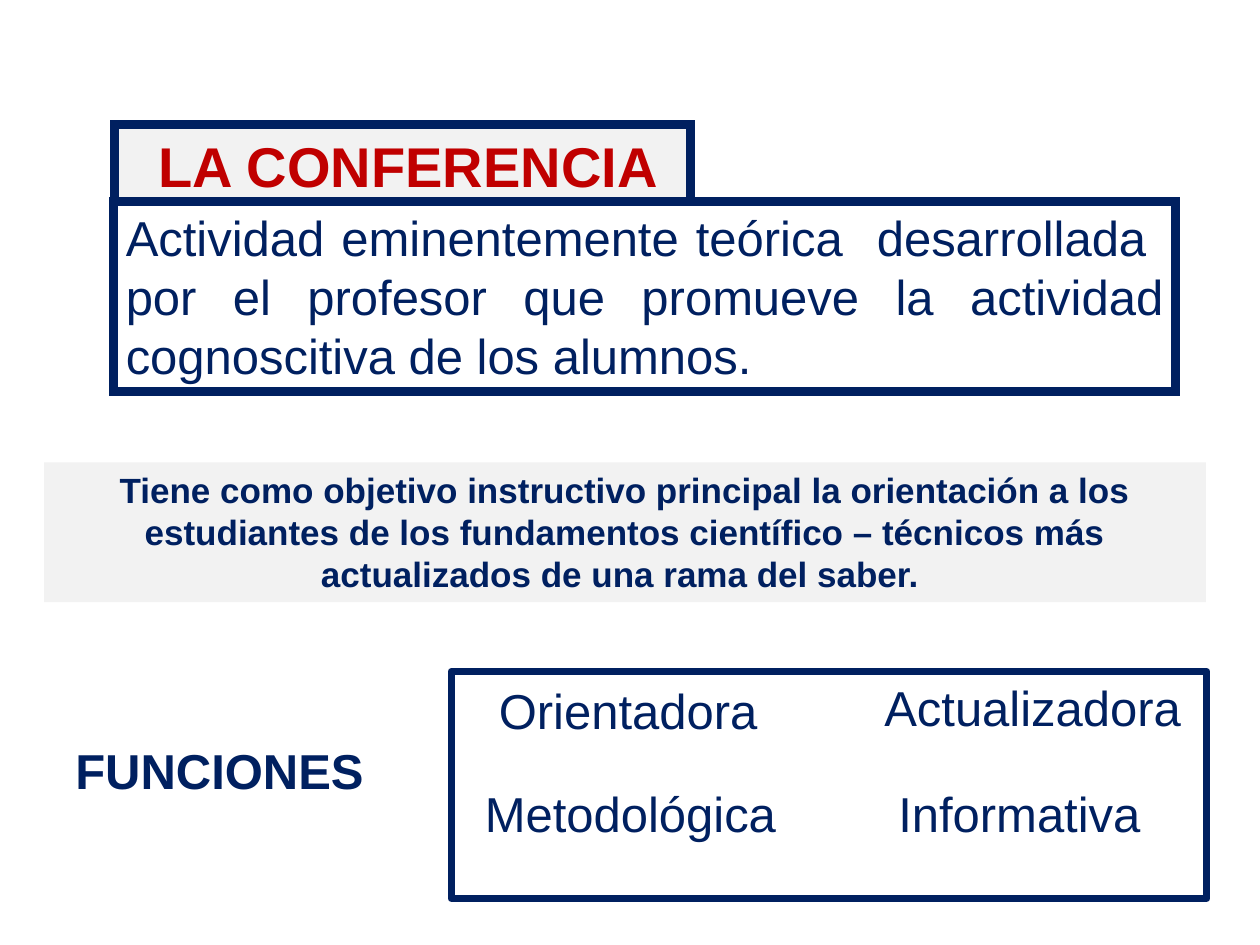
"""Build the slide that defines the lecture and lists its functions."""
import dataclasses

import lxml.etree
import pptx
import pptx.dml.color
import pptx.enum.shapes
import pptx.enum.text
import pptx.oxml
import pptx.oxml.ns
import pptx.util

ALIGN = pptx.enum.text.PP_ALIGN


@dataclasses.dataclass(frozen=True)
class Theme:
    font: str = "Arial"
    navy: str = "002060"
    red: str = "C00000"
    grey: str = "F2F2F2"
    white: str = "FFFFFF"
    title: int = 32
    body: int = 28
    note: int = 20
    border: int = 5
    frame: int = 4


class Deck:
    COLS, ROWS = 100, 75

    def __init__(self, theme):
        self.theme = theme
        self.prs = pptx.Presentation()
        self.prs.slide_width = pptx.util.Inches(10)
        self.prs.slide_height = pptx.util.Inches(7.5)
        self.s = self.prs.slides.add_slide(self.prs.slide_layouts[5])

    def place(self, col, row, cols, rows):
        x = self.prs.slide_width / self.COLS
        y = self.prs.slide_height / self.ROWS
        return [round(v) for v in (col * x, row * y, cols * x, rows * y)]

    def color(self, value):
        return pptx.dml.color.RGBColor.from_string(value)

    def paint(self, sp, fill=None, line=0, join="miter"):
        if fill:
            sp.fill.solid()
            sp.fill.fore_color.rgb = self.color(fill)
        else:
            sp.fill.background()
        if line:
            sp.line.color.rgb = self.color(self.theme.navy)
            sp.line.width = pptx.util.Pt(line)
            ln = sp.line._get_or_add_ln()
            lxml.etree.SubElement(ln, pptx.oxml.ns.qn("a:" + join))
        else:
            sp.line.fill.background()

    def add_text(self, sp, text, size, color=None, bold=False, align=ALIGN.LEFT, indent=0):
        tf = sp.text_frame
        tf.word_wrap = True
        tf.vertical_anchor = pptx.enum.text.MSO_ANCHOR.TOP
        tf.margin_left = pptx.util.Inches(0.1 + indent)
        tf.margin_right = pptx.util.Inches(0.1)
        p = tf.paragraphs[0]
        p.alignment = align
        r = p.add_run()
        r.text = text
        r.font.name = self.theme.font
        r.font.size = pptx.util.Pt(size)
        r.font.bold = bold
        r.font.color.rgb = self.color(color or self.theme.navy)
        return r

    def title(self, at, text):
        sp = self.s.shapes.title
        sp.left, sp.top, sp.width, sp.height = self.place(*at)
        self.paint(sp, self.theme.grey, self.theme.border)
        self.add_text(sp, text, self.theme.title, self.theme.red, True, indent=0.25)

    def box(self, at, fill=None, line=0, join="miter"):
        kind = pptx.enum.shapes.MSO_SHAPE.RECTANGLE
        sp = self.s.shapes.add_shape(kind, *self.place(*at))
        sp.shadow.inherit = False
        self.paint(sp, fill, line, join)
        return sp

    def heading(self, at, text):
        sp = self.s.shapes.add_textbox(*self.place(*at))
        r = self.add_text(sp, text, self.theme.body, bold=True)
        shadow = pptx.oxml.parse_xml(
            f'<a:effectLst {pptx.oxml.ns.nsdecls("a")}>'
            '<a:outerShdw blurRad="38100" dist="38100" dir="2700000" algn="tl">'
            '<a:srgbClr val="000000"/></a:outerShdw></a:effectLst>')
        r.font._element.find(pptx.oxml.ns.qn("a:solidFill")).addnext(shadow)


def main():
    theme = Theme()
    deck = Deck(theme)
    deck.title((9.1, 9.9, 45.7, 6.4), "LA CONFERENCIA")

    definition = deck.box((9, 16, 84.3, 15.1), theme.white, theme.border)
    deck.add_text(definition, "Actividad eminentemente teórica  desarrollada  por el profesor "
                  "que promueve la actividad cognoscitiva de los alumnos.",
                  theme.body, align=ALIGN.JUSTIFY)

    goal = deck.box((3.5, 36.7, 92.2, 11.1), theme.grey)
    deck.add_text(goal, "Tiene como objetivo instructivo principal la orientación a los "
                  "estudiantes de los fundamentos científico – técnicos más actualizados "
                  "de una rama del saber. ", theme.note, bold=True, align=ALIGN.CENTER)

    deck.heading((5, 58.3, 27.5, 5.7), "FUNCIONES")
    left, right, lower = 37.5, 69.2, 61.7
    for text, col, row, cols, indent in (
        ("Orientadora", left, 53.5, 24.8, 0.11),
        ("Metodológica", left, lower, 25.4, 0),
        ("Actualizadora", right, 53.3, 25.9, 0),
        ("Informativa", right, lower, 24.2, 0.11),
    ):
        label = deck.box((col, row, cols, 5.7), theme.white)
        deck.add_text(label, text, theme.body, indent=indent)
    deck.box((35.8, 53.3, 60, 18), line=theme.frame, join="round")

    deck.prs.save("out.pptx")


if __name__ == "__main__":
    main()
